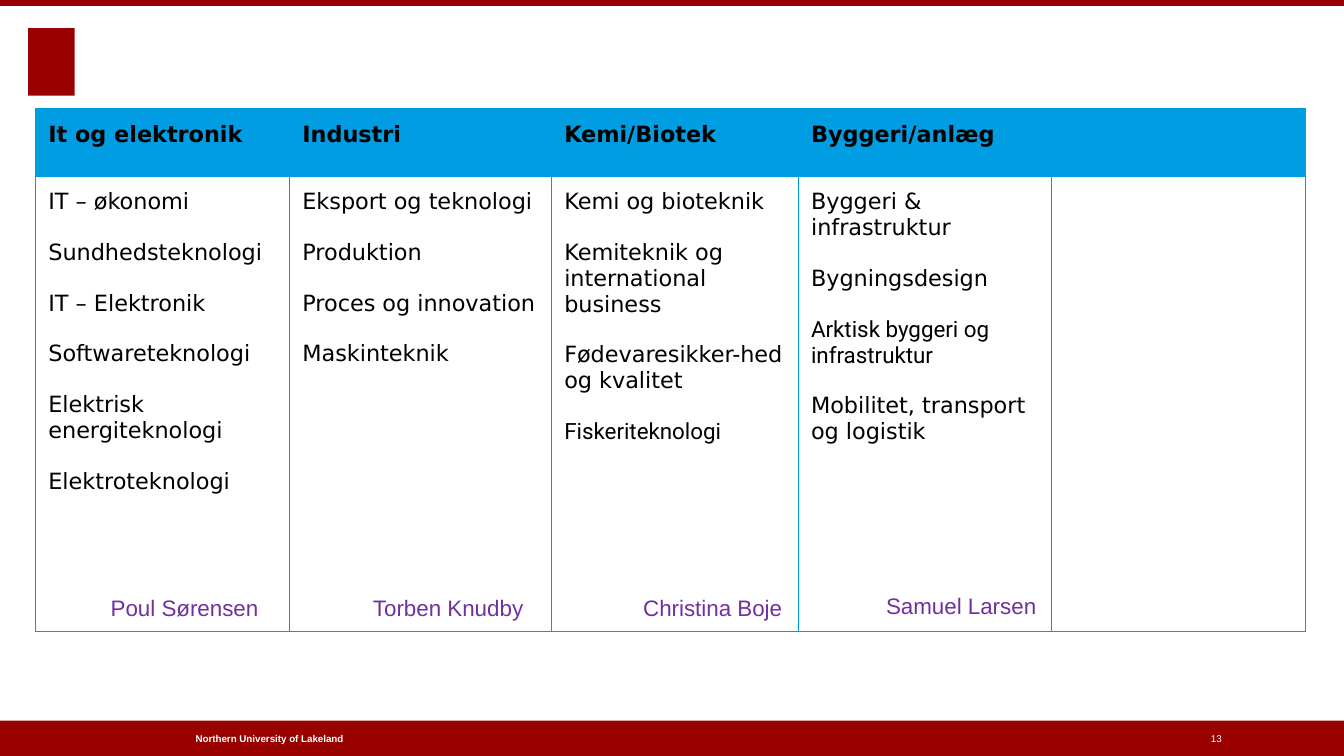
from lxml import etree
from pptx import Presentation
from pptx.dml.color import RGBColor
from pptx.enum.shapes import MSO_SHAPE
from pptx.enum.text import MSO_ANCHOR, PP_ALIGN
from pptx.oxml.ns import qn
from pptx.util import Cm, Pt

RED = RGBColor(0x99, 0x00, 0x00)
BLUE = RGBColor(0x00, 0x9D, 0xE2)
PURPLE = RGBColor(0x70, 0x30, 0xA0)
BLACK = RGBColor(0x00, 0x00, 0x00)
WHITE = RGBColor(0xFF, 0xFF, 0xFF)
RECT = MSO_SHAPE.RECTANGLE
TOP, MIDDLE = MSO_ANCHOR.TOP, MSO_ANCHOR.MIDDLE
LEFT, RIGHT = PP_ALIGN.LEFT, PP_ALIGN.RIGHT

BLANK_LAYOUT = 6
WIDTH, HEIGHT = 33.87, 19.05
FOOTER_TOP, FOOTER_HEIGHT = 18.16, 0.89
CELL_MARGIN = Cm(0.33)
ITEM_GAP = 17.7
COLUMN_WIDTHS = [6.4, 6.6, 6.22, 6.4, 6.4]
ROW_HEIGHTS = [1.7, 11.48]

# Heading and programmes of each column
COLUMNS = [
    ("It og elektronik", ["IT – økonomi", "Sundhedsteknologi", "IT – Elektronik",
                          "Softwareteknologi", "Elektrisk energiteknologi",
                          "Elektroteknologi"]),
    ("Industri", ["Eksport og teknologi", "Produktion", "Proces og innovation",
                  "Maskinteknik"]),
    ("Kemi/Biotek", ["Kemi og bioteknik", "Kemiteknik og international business",
                     "Fødevaresikker-hed og kvalitet", "Fiskeriteknologi"]),
    ("Byggeri/anlæg", ["Byggeri & infrastruktur", "Bygningsdesign",
                       "Arktisk byggeri og infrastruktur",
                       "Mobilitet, transport og logistik"]),
    ("", []),
]
ROBOTO_ITEMS = {"Fiskeriteknologi", "Arktisk byggeri og infrastruktur"}

# Contact person: name, left, top, width
CONTACTS = [
    ("Poul Sørensen", 2.79, 14.96, 3.76),
    ("Torben Knudby", 9.4, 14.96, 3.84),
    ("Christina Boje", 16.21, 14.96, 3.53),
    ("Samuel Larsen", 22.33, 14.91, 3.84),
]


def write(p, text, size=16, font="DejaVu Sans", color=BLACK, bold=False, align=LEFT):
    p.alignment = align
    r = p.add_run()
    r.text = text
    r.font.size = Pt(size)
    r.font.name = font
    r.font.color.rgb = color
    r.font.bold = bold


def add_block(s, left, top, width, height):
    sp = s.shapes.add_shape(RECT, Cm(left), Cm(top), Cm(width), Cm(height))
    sp.shadow.inherit = False
    sp.fill.solid()
    sp.fill.fore_color.rgb = RED
    sp.line.fill.background()


def add_text(s, text, left, top, width, height, wrap=True, anchor=TOP, **style):
    sp = s.shapes.add_textbox(Cm(left), Cm(top), Cm(width), Cm(height))
    tf = sp.text_frame
    tf.word_wrap = wrap
    tf.vertical_anchor = anchor
    tf.margin_left = tf.margin_right = tf.margin_top = tf.margin_bottom = 0
    write(tf.paragraphs[0], text, font="Arial", **style)


def set_borders(cell):
    tc_pr = cell._tc.get_or_add_tcPr()
    for i, side in enumerate(("a:lnL", "a:lnR", "a:lnT", "a:lnB")):
        ln = etree.Element(qn(side), w=str(Pt(0.75)))
        fill = etree.SubElement(ln, qn("a:solidFill"))
        etree.SubElement(fill, qn("a:srgbClr"), val=str(BLUE))
        tc_pr.insert(i, ln)


def fill_cell(cell, items, color=None, bold=False):
    cell.margin_left = cell.margin_right = CELL_MARGIN
    cell.margin_top = cell.margin_bottom = CELL_MARGIN
    if color is None:
        cell.fill.background()
    else:
        cell.fill.solid()
        cell.fill.fore_color.rgb = color
    set_borders(cell)
    tf = cell.text_frame
    for i, item in enumerate(items):
        p = tf.add_paragraph() if i else tf.paragraphs[0]
        p.space_before = Pt(ITEM_GAP if i else 0)
        write(p, item, bold=bold, font="Roboto" if item in ROBOTO_ITEMS else "DejaVu Sans")


def add_programme_table(s):
    frame = s.shapes.add_table(len(ROW_HEIGHTS), len(COLUMNS), Cm(0.89), Cm(2.74),
                               Cm(sum(COLUMN_WIDTHS)), Cm(sum(ROW_HEIGHTS)))
    table = frame.table
    for row, height in zip(table.rows, ROW_HEIGHTS):
        row.height = Cm(height)
    for i, (heading, programmes) in enumerate(COLUMNS):
        table.columns[i].width = Cm(COLUMN_WIDTHS[i])
        fill_cell(table.cell(0, i), [heading] if heading else [], color=BLUE, bold=True)
        fill_cell(table.cell(1, i), programmes)


def main():
    prs = Presentation()
    prs.slide_width, prs.slide_height = Cm(WIDTH), Cm(HEIGHT)
    s = prs.slides.add_slide(prs.slide_layouts[BLANK_LAYOUT])

    # Top band, emblem and footer
    add_block(s, 0, 0, WIDTH, 0.15)
    add_block(s, 0.71, 0.71, 1.17, 1.7)
    add_block(s, 0, FOOTER_TOP, WIDTH, FOOTER_HEIGHT)
    add_text(s, "Northern University of Lakeland", 4.93, FOOTER_TOP, 9.45, FOOTER_HEIGHT,
             anchor=MIDDLE, size=7, color=WHITE, bold=True)
    add_text(s, "13", 15.52, FOOTER_TOP, 15.27, FOOTER_HEIGHT,
             anchor=MIDDLE, size=7, color=WHITE, align=RIGHT)

    # Programmes and contacts
    add_programme_table(s)
    for name, left, top, width in CONTACTS:
        add_text(s, name, left, top, width, 0.69, wrap=False, color=PURPLE)

    prs.save("out.pptx")


if __name__ == "__main__":
    main()
